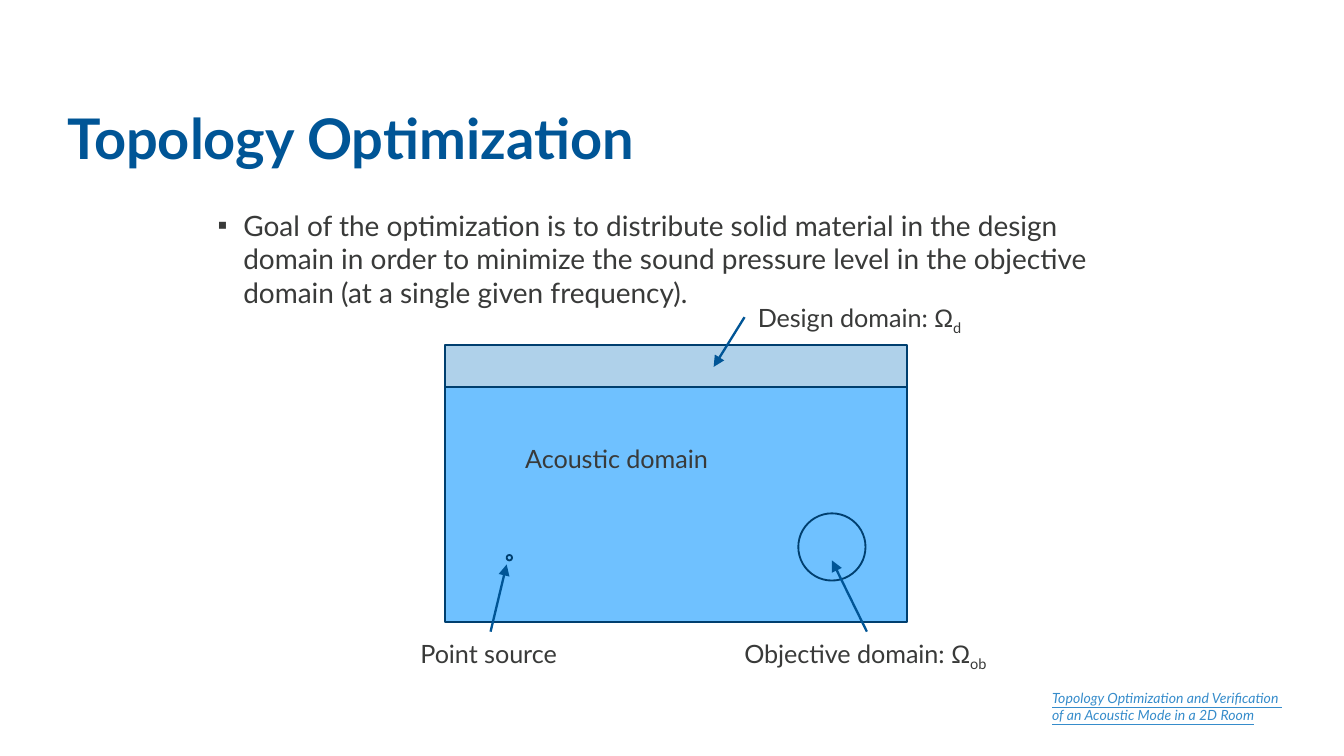
from typing import NamedTuple

from lxml.etree import SubElement
from pptx import Presentation
from pptx.dml.color import RGBColor
from pptx.enum.shapes import MSO_CONNECTOR, MSO_SHAPE
from pptx.enum.text import MSO_ANCHOR
from pptx.oxml.ns import qn
from pptx.util import Inches, Pt

BLUE, NAVY, WATER, PALE = "005596", "003F6F", "6FC1FF", "AFD1EA"
GREY, LINK = "393A39", "368CCB"
FONT, GREEK = "Lato", "Arial"


class Box(NamedTuple):
    left: float
    top: float
    width: float
    height: float


class Part(NamedTuple):
    kind: MSO_SHAPE
    box: Box
    fill: str


class Label(NamedTuple):
    text: str
    box: Box
    sub: str = ""


class Arrow(NamedTuple):
    start: tuple[float, float]
    end: tuple[float, float]


PARTS = [
    Part(MSO_SHAPE.RECTANGLE, Box(3.31, 2.88, 3.44, 1.75), WATER),
    Part(MSO_SHAPE.RECTANGLE, Box(3.31, 2.57, 3.44, 0.31), PALE),
    Part(MSO_SHAPE.OVAL, Box(5.94, 3.82, 0.5, 0.5), WATER),
    Part(MSO_SHAPE.OVAL, Box(3.77, 4.13, 0.04, 0.04), WATER),
]
LABELS = [
    Label("Design domain: ", Box(5.54, 2.2, 1.74, 0.33), "d"),
    Label("Objective domain: ", Box(5.44, 4.7, 2.03, 0.33), "ob"),
    Label("Point source", Box(3.03, 4.7, 1.24, 0.33)),
    Label("Acoustic domain", Box(3.81, 3.25, 1.57, 0.33)),
]
ARROWS = [
    Arrow((5.54, 2.36), (5.31, 2.73)),
    Arrow((6.45, 4.7), (6.19, 4.17)),
    Arrow((3.65, 4.7), (3.77, 4.2)),
]
GOAL = (
    "Goal of the optimization is to distribute solid material in the design "
    "domain in order to minimize the sound pressure level in the objective "
    "domain (at a single given frequency)."
)
SOURCE = "Topology Optimization and Verification \vof an Acoustic Mode in a 2D Room"


def color(code: str) -> RGBColor:
    return RGBColor.from_string(code)


def style(para, size: float, code: str) -> None:
    para.font.name = FONT
    para.font.size = Pt(size)
    para.font.color.rgb = color(code)


def add_text(slide, box: Box, text: str, wrap: bool = False, inset: float = 0.1):
    frame = slide.shapes.add_textbox(*map(Inches, box)).text_frame
    frame.word_wrap = wrap
    frame.margin_left = Inches(inset)
    para = frame.paragraphs[0]
    para.text = text
    return frame, para


def add_part(slide, part: Part) -> None:
    shape = slide.shapes.add_shape(part.kind, *map(Inches, part.box))
    shape.shadow.inherit = False
    shape.fill.solid()
    shape.fill.fore_color.rgb = color(part.fill)
    shape.line.color.rgb = color(NAVY)
    shape.line.width = Pt(1)


def add_label(slide, label: Label) -> None:
    _, para = add_text(slide, label.box, label.text)
    style(para, 13.5, GREY)
    if label.sub:
        omega = para.add_run()
        omega.text = "Ω"
        omega.font.name = GREEK
        sub = para.add_run()
        sub.text = label.sub
        sub.font._element.set("baseline", "-25000")


def add_arrow(slide, arrow: Arrow) -> None:
    ends = map(Inches, arrow.start + arrow.end)
    line = slide.shapes.add_connector(MSO_CONNECTOR.STRAIGHT, *ends)
    line.line.color.rgb = color(BLUE)
    line.line.width = Pt(1.25)
    SubElement(line.line._get_or_add_ln(), qn("a:tailEnd"), type="triangle")
    SubElement(line._element.spPr, qn("a:effectLst"))


def add_bullet(para, indent: float) -> None:
    props = para._p.get_or_add_pPr()
    props.set("marL", str(Inches(indent)))
    props.set("indent", str(-Inches(indent)))
    SubElement(props, qn("a:buFont"), typeface=GREEK)
    SubElement(props, qn("a:buChar"), char="▪")


def main() -> None:
    # Widescreen 16:9 slide
    deck = Presentation()
    deck.slide_width = Inches(10)
    deck.slide_height = Inches(10 * 9 / 16)
    slide = deck.slides.add_slide(deck.slide_layouts[6])

    # Title
    frame, para = add_text(
        slide, Box(0.5, 0.65, 9.08, 0.81), "Topology Optimization", True, 0
    )
    frame.vertical_anchor = MSO_ANCHOR.MIDDLE
    para.line_spacing = 0.9
    style(para, 30, BLUE)
    para.font.bold = True

    # Room with its domains
    for part in PARTS:
        add_part(slide, part)
    for label in LABELS:
        add_label(slide, label)

    # Goal
    _, para = add_text(slide, Box(1.62, 1.5, 6.75, 3.56), GOAL, True, 0)
    add_bullet(para, 0.19)
    style(para, 15, GREY)

    # Arrows from labels to domains
    for arrow in ARROWS:
        add_arrow(slide, arrow)

    # Source
    _, para = add_text(slide, Box(7.73, 5.08, 1.93, 0.35), SOURCE)
    style(para, 7.5, LINK)
    para.font.italic = True
    para.font.underline = True

    deck.save("out.pptx")


if __name__ == "__main__":
    main()
